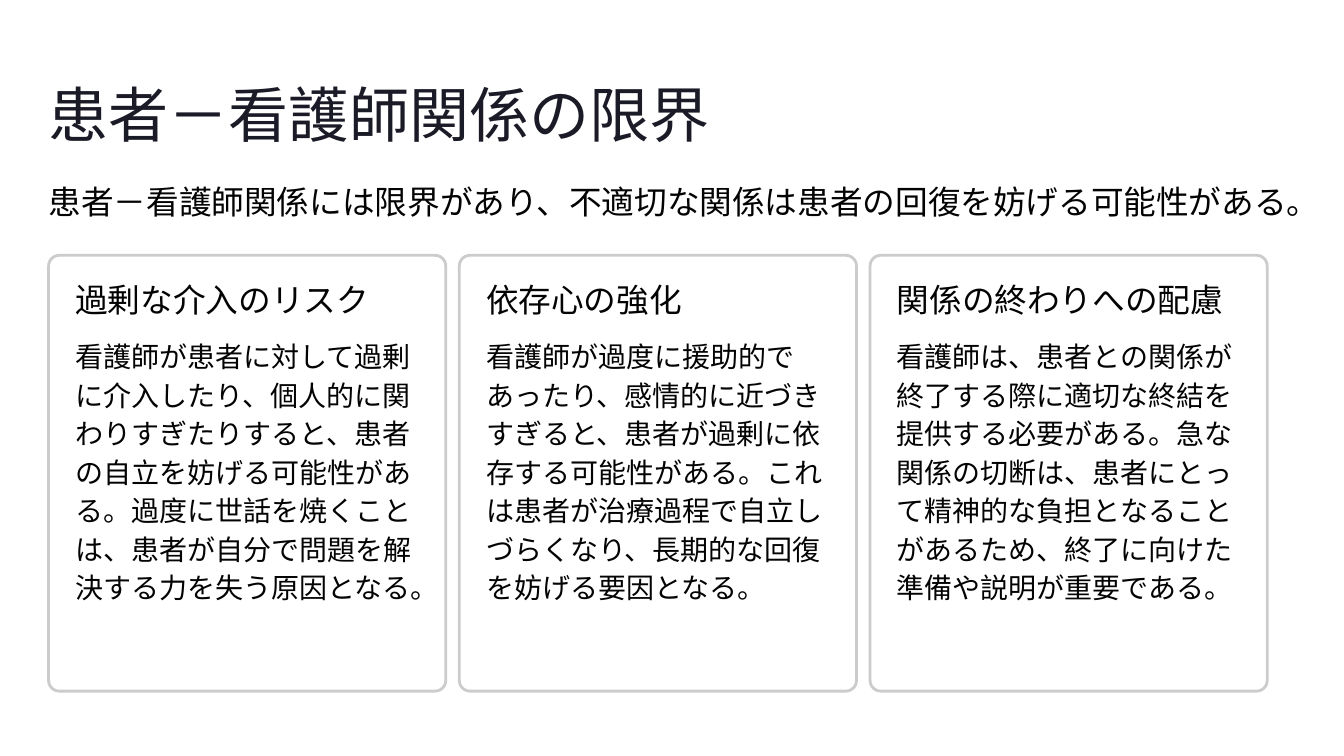
from dataclasses import dataclass

from lxml import etree
from pptx import Presentation
from pptx.dml.color import RGBColor
from pptx.enum.shapes import MSO_SHAPE
from pptx.enum.text import MSO_ANCHOR, MSO_AUTO_SIZE, PP_ALIGN
from pptx.oxml.ns import qn
from pptx.shapes.base import BaseShape
from pptx.slide import Slide
from pptx.util import Cm, Pt

ROUNDED_RECTANGLE = MSO_SHAPE.ROUNDED_RECTANGLE
TOP = MSO_ANCHOR.TOP
NO_AUTO_SIZE = MSO_AUTO_SIZE.NONE
LEFT = PP_ALIGN.LEFT

TITLE_COLOR = RGBColor(0x1B, 0x1B, 0x27)
TEXT_COLOR = RGBColor(0x03, 0x03, 0x03)
CARD_FILL = RGBColor(0xFF, 0xFF, 0xFF)
CARD_BORDER = RGBColor(0xCC, 0xCC, 0xCC)

HEADING_FONT = "Inter"
BODY_FONT = "Roboto"

MARGIN = 1.47
CARD_TOP = 7.72
CARD_WIDTH = 12.01
CARD_HEIGHT = 13.18
CARD_PITCH = 12.42
CARD_PADDING = 0.81
CARD_OPACITY = 95
BODY_TOP = 10.13


@dataclass(frozen=True)
class Card:
    heading: str
    body: str


CARDS = [
    Card(
        "過剰な介入のリスク",
        "看護師が患者に対して過剰に介入したり、個人的に関わりすぎたりすると、"
        "患者の自立を妨げる可能性がある。過度に世話を焼くことは、"
        "患者が自分で問題を解決する力を失う原因となる。",
    ),
    Card(
        "依存心の強化",
        "看護師が過度に援助的であったり、感情的に近づきすぎると、"
        "患者が過剰に依存する可能性がある。これは患者が治療過程で自立しづらくなり、"
        "長期的な回復を妨げる要因となる。",
    ),
    Card(
        "関係の終わりへの配慮",
        "看護師は、患者との関係が終了する際に適切な終結を提供する必要がある。"
        "急な関係の切断は、患者にとって精神的な負担となることがあるため、"
        "終了に向けた準備や説明が重要である。",
    ),
]


def write_text(
    shape: BaseShape,
    text: str,
    *,
    size: float,
    line_height: float,
    font: str,
    color: RGBColor = TEXT_COLOR,
    wrap: bool = False,
) -> None:
    frame = shape.text_frame
    frame.margin_left = frame.margin_top = 0
    frame.margin_right = frame.margin_bottom = 0
    frame.vertical_anchor = TOP
    frame.auto_size = NO_AUTO_SIZE
    frame.word_wrap = wrap
    paragraph = frame.paragraphs[0]
    paragraph.alignment = LEFT
    paragraph.line_spacing = Pt(line_height)
    paragraph.space_before = Pt(0)
    run = paragraph.add_run()
    run.text = text
    run.font.name = font
    run.font.size = Pt(size)
    run.font.color.rgb = color


def add_text_box(
    slide: Slide, left: float, top: float, width: float, height: float
) -> BaseShape:
    return slide.shapes.add_textbox(Cm(left), Cm(top), Cm(width), Cm(height))


def set_fill_opacity(shape: BaseShape, percent: int) -> None:
    color = shape.fill._xPr.find(qn("a:solidFill"))[0]
    etree.SubElement(color, qn("a:alpha")).set("val", str(percent * 1000))


def add_title(slide: Slide, text: str) -> None:
    title = slide.shapes.title
    title.left, title.top = Cm(MARGIN), Cm(2.26)
    title.width, title.height = Cm(20.12), Cm(2.29)
    write_text(
        title, text, size=51.5, line_height=64.5, font=HEADING_FONT, color=TITLE_COLOR
    )


def add_card(slide: Slide, card: Card, left: float) -> None:
    panel = slide.shapes.add_shape(
        ROUNDED_RECTANGLE, Cm(left), Cm(CARD_TOP), Cm(CARD_WIDTH), Cm(CARD_HEIGHT)
    )
    panel.adjustments[0] = 0.027
    panel.shadow.inherit = False
    panel.fill.solid()
    panel.fill.fore_color.rgb = CARD_FILL
    set_fill_opacity(panel, CARD_OPACITY)
    panel.line.color.rgb = CARD_BORDER
    panel.line.width = Pt(2.4)

    text_left = left + CARD_PADDING
    heading = add_text_box(slide, text_left, CARD_TOP + CARD_PADDING, 9.4, 1.32)
    write_text(heading, card.heading, size=28, line_height=32, font=HEADING_FONT)
    body = add_text_box(slide, text_left, BODY_TOP, 10.34, 9.47)
    write_text(body, card.body, size=24, line_height=33, font=BODY_FONT, wrap=True)


def main() -> None:
    presentation = Presentation()
    presentation.slide_width = Cm(40.64)
    presentation.slide_height = Cm(22.86)
    title_only_layout = presentation.slide_layouts[5]
    slide = presentation.slides.add_slide(title_only_layout)

    add_title(slide, "患者－看護師関係の限界")
    summary = add_text_box(slide, MARGIN, 5.51, 36.55, 1.17)
    write_text(
        summary,
        "患者－看護師関係には限界があり、不適切な関係は患者の回復を妨げる可能性がある。",
        size=28,
        line_height=33,
        font=BODY_FONT,
    )
    for index, card in enumerate(CARDS):
        add_card(slide, card, MARGIN + index * CARD_PITCH)

    presentation.save("out.pptx")


if __name__ == "__main__":
    main()
